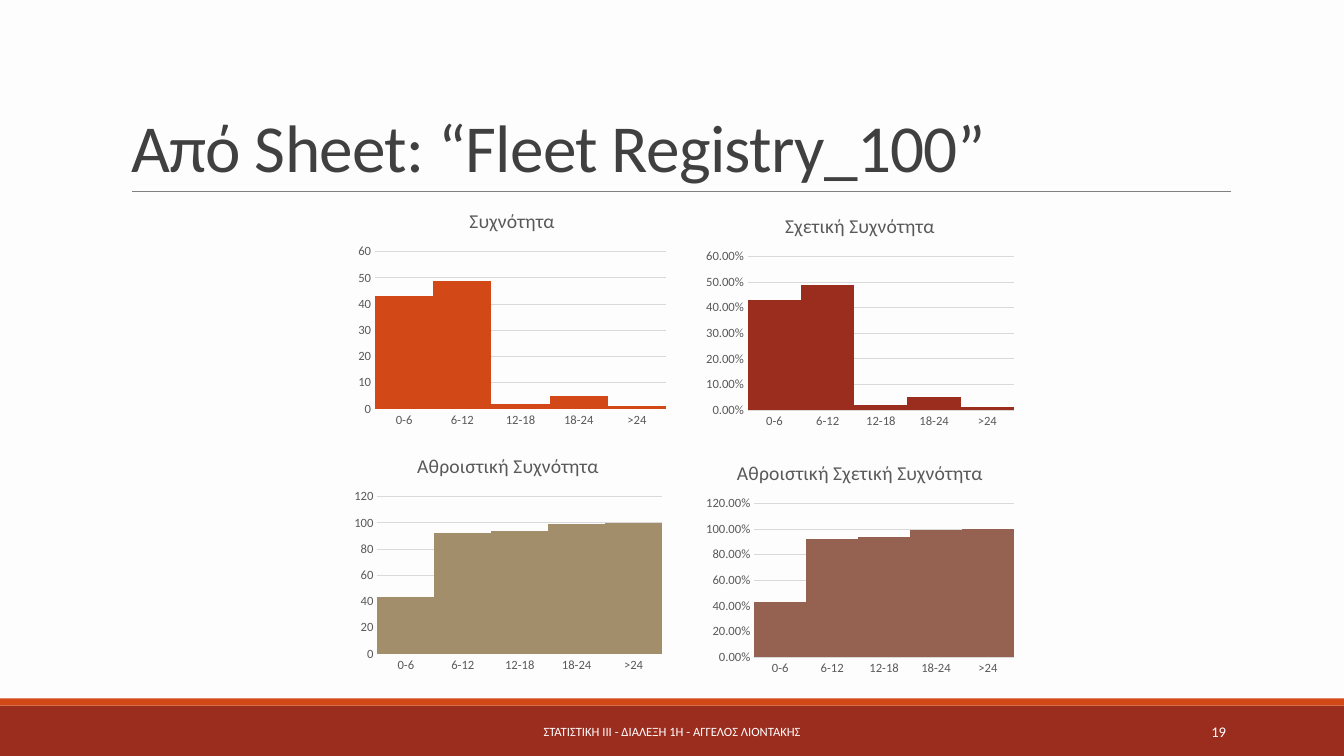
from typing import NamedTuple

from lxml import etree
from pptx import Presentation
from pptx.chart.data import CategoryChartData
from pptx.dml.color import RGBColor
from pptx.enum.chart import XL_CHART_TYPE, XL_TICK_MARK
from pptx.enum.shapes import MSO_CONNECTOR, MSO_SHAPE
from pptx.enum.text import MSO_ANCHOR, MSO_AUTO_SIZE, PP_ALIGN
from pptx.oxml.ns import qn
from pptx.util import Inches, Pt

COLUMN = XL_CHART_TYPE.COLUMN_CLUSTERED
NO_TICK = XL_TICK_MARK.NONE
STRAIGHT = MSO_CONNECTOR.STRAIGHT
RECT = MSO_SHAPE.RECTANGLE
MIDDLE, BOTTOM = MSO_ANCHOR.MIDDLE, MSO_ANCHOR.BOTTOM
NO_FIT = MSO_AUTO_SIZE.NONE
LEFT, CENTER, RIGHT = PP_ALIGN.LEFT, PP_ALIGN.CENTER, PP_ALIGN.RIGHT

FONT = "Calibri"
TITLE_ONLY = 5
COLORS = {
    "back": "FDFDFD", "title": "404040", "rule": "808080", "white": "FFFFFF",
    "label": "595959", "grid": "D9D9D9", "orange": "D34817", "red": "9B2D1F",
    "sand": "A28E6A", "brown": "956251",
}
BINS = ["0-6", "6-12", "12-18", "18-24", ">24"]


class Box(NamedTuple):
    left: float
    top: float
    width: float
    height: float


class Plot(NamedTuple):
    title: str
    box: Box
    color: str
    values: list[float]
    top: float
    step: float
    format: str


class Band(NamedTuple):
    box: Box
    color: str


class Note(NamedTuple):
    text: str
    box: Box
    size: float
    align: PP_ALIGN


BANDS = [
    Band(Box(0, 7, 13.33, 0.5), "red"),
    Band(Box(0, 6.93, 13.33, 0.07), "orange"),
]
PLOTS = [
    Plot("Συχνότητα", Box(3.49, 1.92, 3.18, 2.37), "orange",
         [43, 49, 2, 5, 1], 60, 10, "General"),
    Plot("Σχετική Συχνότητα", Box(6.94, 1.97, 3.18, 2.33), "red",
         [0.43, 0.49, 0.02, 0.05, 0.01], 0.6, 0.1, "0.00%"),
    Plot("Αθροιστική Συχνότητα", Box(3.45, 4.35, 3.18, 2.37), "sand",
         [43, 92, 94, 99, 100], 120, 20, "General"),
    Plot("Αθροιστική Σχετική Συχνότητα", Box(6.94, 4.42, 3.18, 2.33), "brown",
         [0.43, 0.92, 0.94, 0.99, 1], 1.2, 0.2, "0.00%"),
]
NOTES = [
    Note("ΣΤΑΤΙΣΤΙΚΗ ΙΙΙ - ΔΙΑΛΕΞΗ 1Η - ΑΓΓΕΛΟΣ ΛΙΟΝΤΑΚΗΣ",
         Box(4.03, 7.06, 5.27, 0.4), 9, CENTER),
    Note("19", Box(10.83, 7.06, 1.43, 0.4), 10.5, RIGHT),
]


def paint(name: str) -> RGBColor:
    return RGBColor.from_string(COLORS[name])


def style(font, size: float, color: str) -> None:
    font.name = FONT
    font.size = Pt(size)
    font.bold = False
    font.color.rgb = paint(color)


def write(frame, text: str, *, size: float, color: str, align=LEFT,
          anchor=MIDDLE, spacing: float = 1, track: int = 0) -> None:
    frame.word_wrap = True
    frame.auto_size = NO_FIT
    frame.vertical_anchor = anchor
    line = frame.paragraphs[0]
    line.alignment = align
    line.line_spacing = spacing
    run = line.add_run()
    run.text = text
    style(run.font, size, color)
    if track:
        run.font._element.set("spc", str(track))


def draw_band(slide, band: Band) -> None:
    shape = slide.shapes.add_shape(RECT, *map(Inches, band.box))
    shape.shadow.inherit = False
    shape.fill.solid()
    shape.fill.fore_color.rgb = paint(band.color)
    shape.line.fill.background()


def draw_rule(slide) -> None:
    rule = slide.shapes.add_connector(STRAIGHT, *map(Inches, (1.31, 1.9, 12.21, 1.9)))
    rule.line.color.rgb = paint("rule")
    rule.line.width = Pt(0.5)
    etree.SubElement(rule._element.spPr, qn("a:effectLst"))


def draw_title(slide) -> None:
    title = slide.shapes.title
    title.left, title.top, title.width, title.height = map(Inches, (1.2, 0.31, 11, 1.59))
    write(title.text_frame, "Από Sheet: “Fleet Registry_100”", size=48,
          color="title", anchor=BOTTOM, spacing=0.85, track=-50)


def draw_note(slide, note: Note) -> None:
    box = slide.shapes.add_textbox(*map(Inches, note.box))
    write(box.text_frame, note.text, size=note.size, color="white", align=note.align)


def draw_plot(slide, plot: Plot) -> None:
    data = CategoryChartData(number_format=plot.format)
    data.categories = BINS
    data.add_series(plot.title, plot.values)
    chart = slide.shapes.add_chart(COLUMN, *map(Inches, plot.box), data).chart
    style(chart.font, 10, "label")
    chart.has_legend = False
    chart.has_title = True
    write(chart.chart_title.text_frame, plot.title, size=14, color="label", align=CENTER)
    chart.chart_title.include_in_layout = False

    bars = chart.plots[0]
    bars.gap_width = 0
    bars.overlap = -27
    bars.vary_by_categories = False
    fill = bars.series[0].format.fill
    fill.solid()
    fill.fore_color.rgb = paint(plot.color)

    for axis in (chart.category_axis, chart.value_axis):
        axis.major_tick_mark = axis.minor_tick_mark = NO_TICK
        style(axis.tick_labels.font, 9, "label")
    scale = chart.value_axis
    scale.minimum_scale, scale.maximum_scale = 0, plot.top
    scale.major_unit = plot.step
    scale.tick_labels.number_format = plot.format
    scale.tick_labels.number_format_is_linked = False
    scale.format.line.fill.background()
    for line in (chart.category_axis.format.line, scale.major_gridlines.format.line):
        line.color.rgb = paint("grid")
        line.width = Pt(0.75)


def main() -> None:
    deck = Presentation()
    deck.slide_width, deck.slide_height = Inches(13.33), Inches(7.5)
    slide = deck.slides.add_slide(deck.slide_layouts[TITLE_ONLY])
    slide.background.fill.solid()
    slide.background.fill.fore_color.rgb = paint("back")
    for band in BANDS:
        draw_band(slide, band)
    draw_rule(slide)
    draw_title(slide)
    for plot in PLOTS:
        draw_plot(slide, plot)
    for note in NOTES:
        draw_note(slide, note)
    deck.save("out.pptx")


if __name__ == "__main__":
    main()
